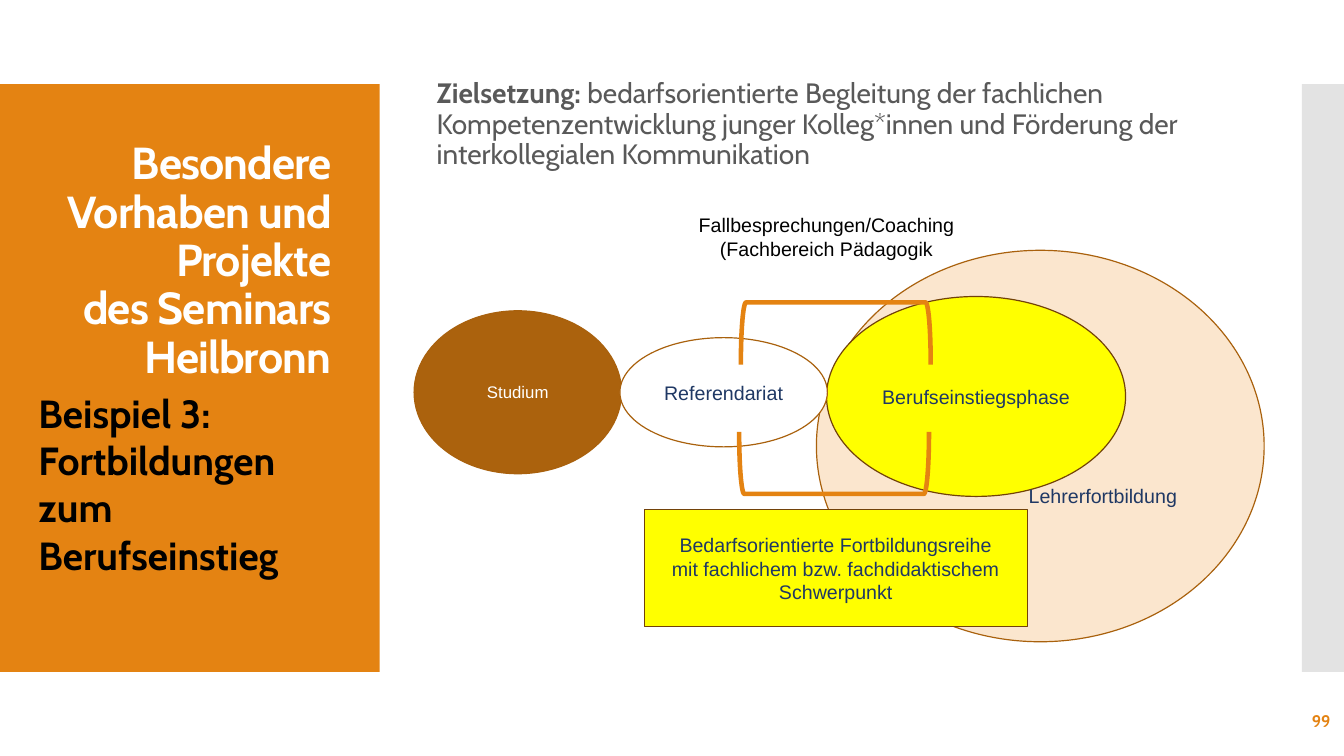
"""Build the slide on in-service training for teachers starting their career."""
import pptx
import pptx.dml.color
import pptx.enum.shapes
import pptx.enum.text
import pptx.oxml
import pptx.oxml.ns
import pptx.util

COLORS = {"orange": "E48312", "grey": "C8C8C8", "text": "595959", "white": "FFFFFF",
          "black": "000000", "navy": "1F3864", "peach": "FBE6CE", "yellow": "FFFF00",
          "brown": "AB620D", "outline": "A9610D", "dark outline": "724209"}
SHAPES = pptx.enum.shapes.MSO_SHAPE
ALIGN = pptx.enum.text.PP_ALIGN
ANCHOR = pptx.enum.text.MSO_ANCHOR

presentation = pptx.Presentation()
presentation.slide_width = pptx.util.Inches(13.333)
presentation.slide_height = pptx.util.Inches(7.5)
slide = presentation.slides.add_slide(presentation.slide_layouts[6])
column = presentation.slide_width / 160
row = presentation.slide_height / 90


def grid(left, top, width, height):
    return [round(cells * unit) for cells, unit in
            zip((left, top, width, height), (column, row, column, row))]


def write(shape, paragraphs, size=14, font="Arial", color="navy", bold=False,
          align=ALIGN.CENTER, anchor=ANCHOR.MIDDLE, spacing=None, tracking=None, inset=0.1):
    frame = shape.text_frame
    frame.word_wrap = True
    frame.vertical_anchor = anchor
    frame.margin_left = frame.margin_right = pptx.util.Inches(inset)
    for index, runs in enumerate(paragraphs):
        paragraph = frame.add_paragraph() if index else frame.paragraphs[0]
        paragraph.alignment = align
        paragraph.line_spacing = spacing
        for position, text in enumerate([runs] if isinstance(runs, str) else runs):
            run = paragraph.add_run()
            run.text = text
            run.font.size = pptx.util.Pt(size)
            run.font.name = font
            run.font.bold = bold and position == 0
            run.font.color.rgb = pptx.dml.color.RGBColor.from_string(COLORS[color])
            if tracking:
                run.font._element.set("spc", str(tracking))


panels = [("orange", 0, 45.2), ("grey", 155, 5)]
for fill, left, width in panels:
    panel = slide.shapes.add_shape(SHAPES.RECTANGLE, *grid(left, 10, width, 70))
    panel.shadow.inherit = False
    panel.fill.solid()
    panel.fill.fore_color.rgb = pptx.dml.color.RGBColor.from_string(COLORS[fill])
    panel.line.fill.background()
    if fill == "grey":
        color_element = panel._element.spPr.find(".//" + pptx.oxml.ns.qn("a:srgbClr"))
        color_element.append(pptx.oxml.parse_xml(
            '<a:alpha %s val="50000"/>' % pptx.oxml.ns.nsdecls("a")))

heading = {"font": "Cabin", "bold": True}
goal = ("Zielsetzung: ", "bedarfsorientierte Begleitung der fachlichen Kompetenzentwicklung "
        "junger Kolleg*innen und Förderung der interkollegialen Kommunikation")
headings = [
    ((50.8, 8.2, 96, 13.4), [goal],
     {"size": 20, "color": "text", "align": ALIGN.LEFT, "spacing": 0.9}),
    ((139.6, 83.4, 20, 4.8), ["99"], {"size": 12, "color": "orange", "align": ALIGN.RIGHT}),
    ((3.4, 15, 37.2, 31.2), ["Besondere Vorhaben und Projekte", "des Seminars Heilbronn"],
     {"size": 32, "color": "white", "align": ALIGN.RIGHT, "anchor": ANCHOR.BOTTOM,
      "spacing": 0.9, "tracking": -60}),
    ((3.4, 45.8, 37.2, 30.5), ["Beispiel 3: Fortbildungen zum Berufseinstieg"],
     {"size": 28, "color": "black", "align": ALIGN.LEFT, "anchor": ANCHOR.TOP}),
]
for place, paragraphs, style in headings:
    write(slide.shapes.add_textbox(*grid(*place)), paragraphs, **heading, **style)

phases = [
    ((97.2, 29.8, 53.3, 46.6), "peach", "outline", None, {}),
    ((98.4, 35.3, 35.6, 23.8), "yellow", "dark outline", "Berufseinstiegsphase", {}),
    ((49.3, 37, 24.7, 19.4), "brown", "outline", "Studium", {"size": 12, "color": "white"}),
    ((73.8, 40.2, 24.7, 13), "white", "outline", "Referendariat", {}),
]
for place, fill, outline, name, style in phases:
    phase = slide.shapes.add_shape(SHAPES.OVAL, *grid(*place))
    phase.shadow.inherit = False
    phase.fill.solid()
    phase.fill.fore_color.rgb = pptx.dml.color.RGBColor.from_string(COLORS[fill])
    phase.line.color.rgb = pptx.dml.color.RGBColor.from_string(COLORS[outline])
    phase.line.width = pptx.util.Pt(0.85)
    if name:
        write(phase, [name], inset=0, **style)

training_label = slide.shapes.add_textbox(*grid(120.3, 56.6, 22, 4.8))
write(training_label, ["Lehrerfortbildung"])
coaching_label = slide.shapes.add_textbox(*grid(81.4, 24.8, 34, 9.6))
write(coaching_label, ["Fallbesprechungen/Coaching", "(Fachbereich Pädagogik"],
      color="black", anchor=ANCHOR.TOP)

for left, top, rotation in [(95.8, 28.4, 90), (95.6, 43.8, 270)]:
    bracket = slide.shapes.add_shape(SHAPES.LEFT_BRACKET, *grid(left, top, 7.4, 22.6))
    bracket.rotation = rotation
    bracket.shadow.inherit = False
    bracket.fill.background()
    bracket.line.color.rgb = pptx.dml.color.RGBColor.from_string(COLORS["orange"])
    bracket.line.width = pptx.util.Pt(3.25)

series = slide.shapes.add_shape(SHAPES.RECTANGLE, *grid(76.7, 60.7, 45.6, 13.9))
series.shadow.inherit = False
series.fill.solid()
series.fill.fore_color.rgb = pptx.dml.color.RGBColor.from_string(COLORS["yellow"])
series.line.color.rgb = pptx.dml.color.RGBColor.from_string(COLORS["dark outline"])
series.line.width = pptx.util.Pt(0.5)
write(series, ["Bedarfsorientierte Fortbildungsreihe",
               "mit fachlichem bzw. fachdidaktischem Schwerpunkt"])

presentation.save("out.pptx")
